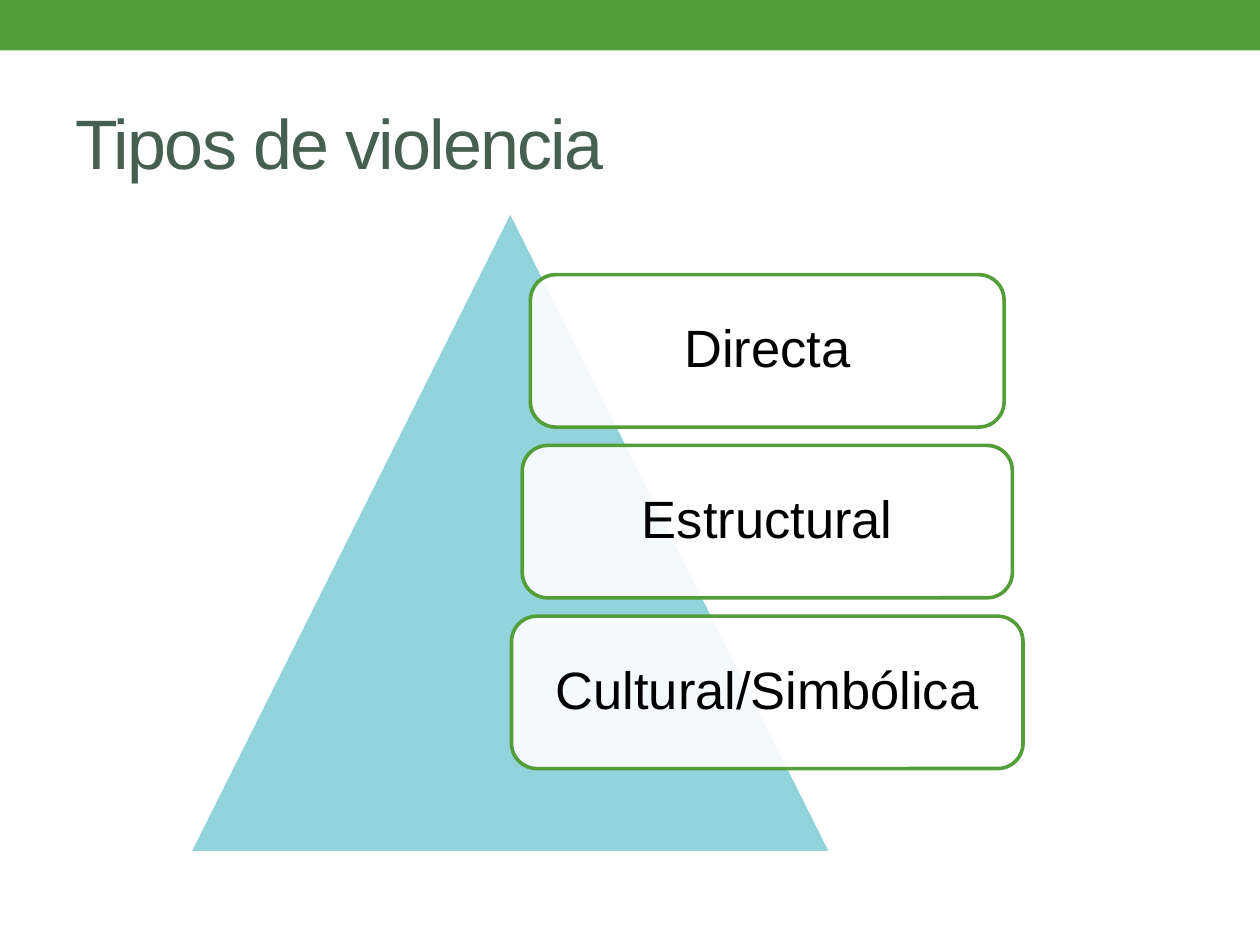
"""Build the slide on the types of violence: a pyramid with three labelled boxes."""
from lxml import etree
from pptx import Presentation
from pptx.dml.color import RGBColor
from pptx.enum.shapes import MSO_SHAPE
from pptx.enum.text import MSO_ANCHOR, PP_ALIGN
from pptx.oxml.ns import qn
from pptx.util import Inches, Pt

RECTANGLE = MSO_SHAPE.RECTANGLE
TRIANGLE = MSO_SHAPE.ISOSCELES_TRIANGLE
ROUNDED = MSO_SHAPE.ROUNDED_RECTANGLE
MIDDLE = MSO_ANCHOR.MIDDLE
LEFT, CENTER = PP_ALIGN.LEFT, PP_ALIGN.CENTER

GREEN = RGBColor(0x54, 0x9E, 0x39)
DARK_GREEN = RGBColor(0x45, 0x5F, 0x51)
AQUA = RGBColor(0x92, 0xD3, 0xDC)
WHITE = RGBColor(0xFF, 0xFF, 0xFF)
BLACK = RGBColor(0, 0, 0)

FONT = "Arial"
WIDTH, HEIGHT = 10, 7.5
LINE_WIDTH = 2.08
BOX_CENTER, BOX_TOP, BOX_HEIGHT, BOX_PITCH = 6.09, 2.18, 1.21, 1.355
BOXES = [("Directa", 3.76), ("Estructural", 3.89), ("Cultural/Simbólica", 4.06)]


def add_shape(slide, kind, box, fill, line=None):
    shape = slide.shapes.add_shape(kind, *map(Inches, box))
    shape.shadow.inherit = False
    shape.fill.solid()
    shape.fill.fore_color.rgb = fill
    if line is None:
        shape.line.fill.background()
    else:
        shape.line.color.rgb = line
        shape.line.width = Pt(LINE_WIDTH)
    return shape


def set_text(shape, text, size, color, alignment, **frame_format):
    frame = shape.text_frame
    frame.text = text
    frame_format.update(word_wrap=True, vertical_anchor=MIDDLE)
    for name, value in frame_format.items():
        setattr(frame, name, value)
    paragraph = frame.paragraphs[0]
    paragraph.alignment = alignment
    font = paragraph.runs[0].font
    for name, value in {"name": FONT, "size": Pt(size)}.items():
        setattr(font, name, value)
    font.color.rgb = color
    return paragraph


def set_opacity(shape, percent):
    color = shape.fill._xPr.find(qn("a:solidFill"))[0]
    etree.SubElement(color, qn("a:alpha")).set("val", str(percent * 1000))


def add_title(slide, text):
    title = slide.shapes.title
    title.left, title.top, title.width, title.height = map(Inches, (0.5, 0.58, 9, 1.08))
    paragraph = set_text(title, text, 40, DARK_GREEN, LEFT)
    paragraph.runs[0].font._element.set("spc", "-100")


def add_label_box(slide, row, text, width):
    box = (BOX_CENTER - width / 2, BOX_TOP + row * BOX_PITCH, width, BOX_HEIGHT)
    shape = add_shape(slide, ROUNDED, box, WHITE, GREEN)
    set_opacity(shape, 90)
    sides = ("left", "top", "right", "bottom")
    margins = {f"margin_{side}": Inches(0.12) for side in sides}
    paragraph = set_text(shape, text, 30, BLACK, CENTER, **margins)
    paragraph.line_spacing = 0.9


def main():
    presentation = Presentation()
    presentation.slide_width = Inches(WIDTH)
    presentation.slide_height = Inches(HEIGHT)
    slide = presentation.slides.add_slide(presentation.slide_layouts[5])
    add_shape(slide, RECTANGLE, (0, 0, WIDTH, 0.4), GREEN)
    add_title(slide, "Tipos de violencia")
    add_shape(slide, TRIANGLE, (1.5, 1.67, 5.1, 5.1), AQUA, WHITE)
    for row, (text, width) in enumerate(BOXES):
        add_label_box(slide, row, text, width)
    presentation.save("out.pptx")


if __name__ == "__main__":
    main()
